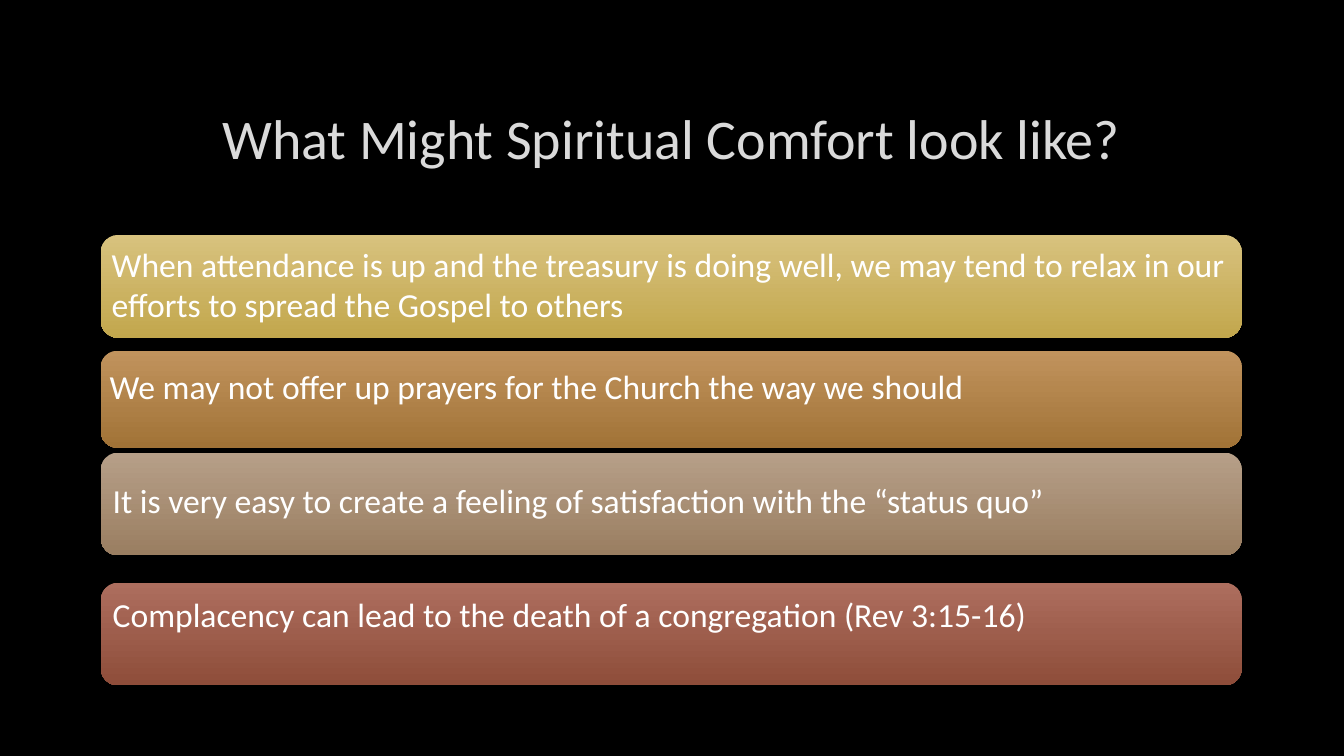
from pptx import Presentation, util as u
from pptx.dml import color
from pptx.enum import shapes, text

HUES = {
    "back": "000000", "title": "DADADA", "body": "FFFFFF",
    "gold": ("D8C27E", "C2A74D"), "amber": ("C1935D", "A17337"),
    "taupe": ("B69F88", "9A7E61"), "rust": ("AD6E5E", "8E4D3A"),
}
LEFT, WIDE = 72, 815
BARS = [
    ("gold", 167.8, 73.4), ("amber", 250.6, 69.1),
    ("taupe", 323.3, 73.4), ("rust", 416.2, 73.4),
]
LINES = [
    ("When attendance is up and the treasury is doing well, we may tend to relax "
     "in our efforts to spread the Gospel to others", 72.7, 170.6, 815, 65.5),
    ("We may not offer up prayers for the Church the way we should",
     71.3, 257.8, 815, 36),
    ("It is very easy to create a feeling of satisfaction with the “status quo”",
     73.4, 339.1, 814.3, 36),
    ("Complacency can lead to the death of a congregation (Rev 3:15-16)",
     73.4, 420.5, 800.6, 36),
]


def rgb(code):
    return color.RGBColor.from_string(code)


class Board:
    font = "Calibri"

    def __init__(self, deck):
        self.page = deck.slides.add_slide(deck.slide_layouts[6])
        fill = self.page.background.fill
        fill.solid()
        fill.fore_color.rgb = rgb(HUES["back"])

    def bar(self, hue, x, y, w, h):
        kind = shapes.MSO_SHAPE.ROUNDED_RECTANGLE
        form = self.page.shapes.add_shape(kind, *map(u.Pt, (x, y, w, h)))
        form.shadow.inherit = False
        form.line.fill.background()
        form.fill.gradient()
        form.fill.gradient_angle = 270
        for stop, code, spot in zip(form.fill.gradient_stops, HUES[hue], (0, 1)):
            stop.color.rgb = rgb(code)
            stop.position = spot

    def label(self, words, x, y, w, h, size=24, hue="body",
              align=text.PP_ALIGN.LEFT, anchor=text.MSO_ANCHOR.TOP):
        box = self.page.shapes.add_textbox(*map(u.Pt, (x, y, w, h)))
        frame = box.text_frame
        frame.word_wrap = True
        frame.vertical_anchor = anchor
        para = frame.paragraphs[0]
        para.alignment = align
        run = para.add_run()
        run.text = words
        look = {"name": self.font, "size": u.Pt(size)}
        for key, value in look.items():
            setattr(run.font, key, value)
        run.font.color.rgb = rgb(HUES[hue])


def main():
    deck = Presentation()
    deck.slide_width, deck.slide_height = u.Pt(960), u.Pt(540)
    board = Board(deck)
    board.label("What Might Spiritual Comfort look like?", LEFT, 48.2, WIDE, 99.4,
                size=40, hue="title", align=text.PP_ALIGN.CENTER,
                anchor=text.MSO_ANCHOR.MIDDLE)
    for hue, top, high in BARS:
        board.bar(hue, LEFT, top, WIDE, high)
    for line in LINES:
        board.label(*line)
    deck.save("out.pptx")


if __name__ == "__main__":
    main()
